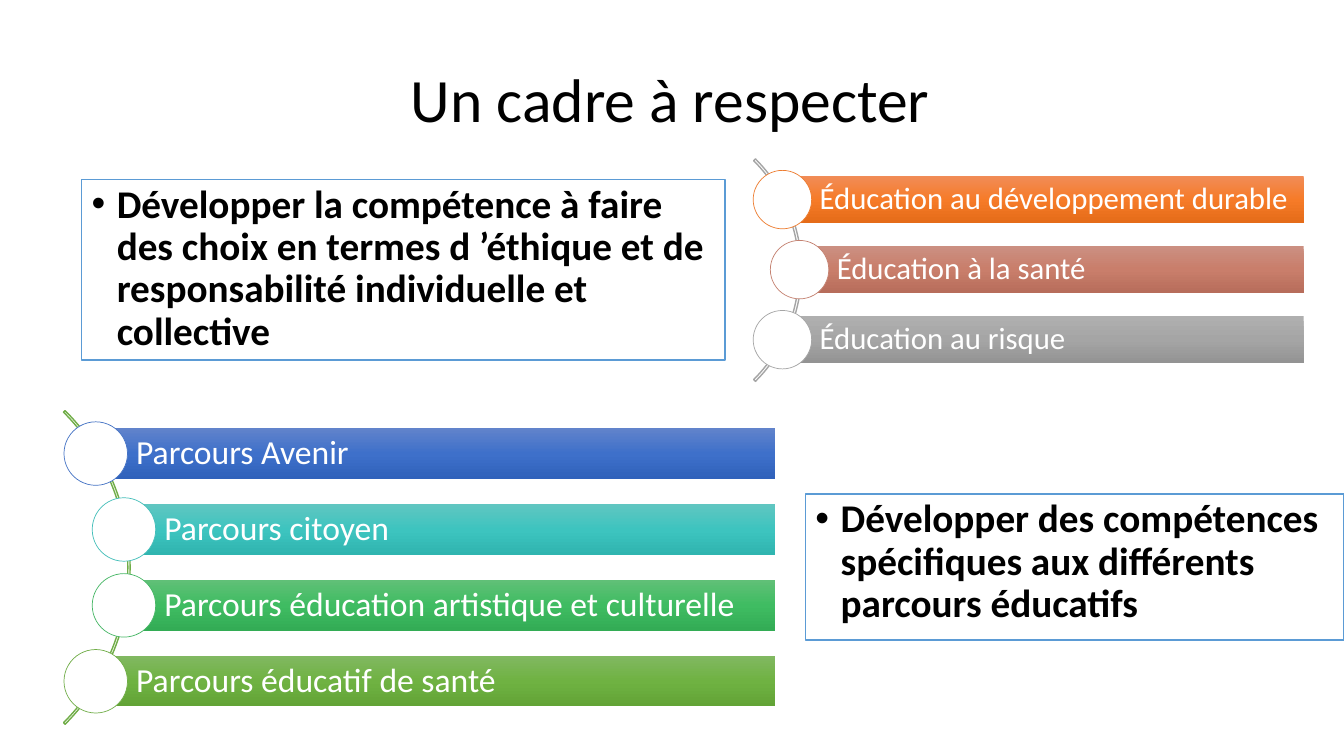
"""Build the slide "Un cadre à respecter" with its two lists and two goals."""
import copy

import lxml.etree
import pptx
import pptx.dml.color
import pptx.enum.shapes
import pptx.enum.text
import pptx.oxml.ns
import pptx.util

Inches = pptx.util.Inches
Pt = pptx.util.Pt
qn = pptx.oxml.ns.qn
SHAPES = pptx.enum.shapes.MSO_SHAPE
ANCHOR = pptx.enum.text.MSO_ANCHOR
ALIGN = pptx.enum.text.PP_ALIGN


def color(value):
    """Return the colour of a hex string."""
    return pptx.dml.color.RGBColor.from_string(value)


def add_shape(kind, box, line=None, line_width=1, text="", size=24, text_color="FFFFFF"):
    """Add a white shape with an optional outline and left-aligned text."""
    shape = slide.shapes.add_shape(kind, *[Inches(length) for length in box])
    shape.shadow.inherit = False
    shape.fill.solid()
    shape.fill.fore_color.rgb = color("FFFFFF")
    if line:
        shape.line.color.rgb = color(line)
        shape.line.width = Pt(line_width)
    else:
        shape.line.fill.background()
    if text:
        shape.text_frame.text = text
        shape.text_frame.word_wrap = True
        paragraph = shape.text_frame.paragraphs[0]
        paragraph.alignment = ALIGN.LEFT
        paragraph.line_spacing = 0.9
        font = paragraph.runs[0].font
        font.name = "Calibri"
        font.size = Pt(size)
        font.color.rgb = color(text_color)
    return shape


presentation = pptx.Presentation()
presentation.slide_width = Inches(13.33)
presentation.slide_height = Inches(7.5)
slide = presentation.slides.add_slide(presentation.slide_layouts[5])

title = slide.shapes.title
title.left, title.top = Inches(0.9), Inches(0.29)
title.width, title.height = Inches(11.5), Inches(1.45)
title.text_frame.text = "Un cadre à respecter"
title.text_frame.vertical_anchor = ANCHOR.MIDDLE
title_paragraph = title.text_frame.paragraphs[0]
title_paragraph.alignment = ALIGN.CENTER
title_paragraph.line_spacing = 0.9
title_font = title_paragraph.runs[0].font
title_font.name = "Calibri"
title_font.size = Pt(44)
title_font.color.rgb = color("000000")

goals = [
    ((0.81, 1.78, 6.38, 1.79),
     "Développer la compétence à faire des choix en termes d ’éthique "
     "et de responsabilité individuelle et collective"),
    ((7.99, 4.9, 5.34, 1.45),
     "Développer des compétences spécifiques aux différents parcours éducatifs"),
]
for box, text in goals:
    goal = add_shape(SHAPES.RECTANGLE, box, "5B9BD5", 1, text, 28, "000000")
    goal.text_frame.vertical_anchor = ANCHOR.TOP
    paragraph = goal.text_frame.paragraphs[0]
    paragraph.space_before = Pt(10)
    paragraph.runs[0].font.bold = True
    properties = paragraph._p.get_or_add_pPr()
    properties.set("marL", str(Inches(0.25)))
    properties.set("indent", str(-Inches(0.25)))
    bullet_font = lxml.etree.SubElement(properties, qn("a:buFont"))
    bullet_font.set("typeface", "Arial")
    lxml.etree.SubElement(properties, qn("a:buChar")).set("char", "•")

lists = [
    {
        "arc": (4.83, 1.12, 3.12, 3.12), "thickness": 0.008, "arc_color": "A5A5A5",
        "top": 1.75, "pitch": 0.695, "height": 0.46, "right": 12.93,
        "circle": 0.58, "inset": 0.37, "margin": 0.06, "size": 22,
        "items": [
            (7.76, "Éducation au développement durable", "ED7D31", ("F18C57", "F67B28", "E56C19")),
            (7.93, "Éducation à la santé", "C48170", ("CB8F81", "C97E6B", "B76D5B")),
            (7.76, "Éducation au risque", "A5A5A5", ("AFAFAF", "A5A5A5", "939393")),
        ],
    },
    {
        "arc": (-3.11, 3.43, 4.4, 4.4), "thickness": 0.005, "arc_color": "70AD47",
        "top": 4.25, "pitch": 0.753, "height": 0.5, "right": 7.69,
        "circle": 0.63, "inset": 0.4, "margin": 0.07, "size": 24,
        "items": [
            (0.95, "Parcours Avenir", "4472C4", ("6183CB", "3E70CA", "3062BB")),
            (1.23, "Parcours citoyen", "43BEB9", ("60C6C1", "3DC4BF", "30B5B0")),
            (1.23, "Parcours éducation artistique et culturelle", "45B664",
             ("60C077", "3FBC62", "33AC55")),
            (0.95, "Parcours éducatif de santé", "70AD47", ("81B861", "6FB242", "62A336")),
        ],
    },
]
for group in lists:
    arc = add_shape(SHAPES.BLOCK_ARC, group["arc"], group["arc_color"])
    arc.fill.background()
    for index, value in enumerate((189, 27, group["thickness"])):
        arc.adjustments[index] = value

    for row, (left, text, outline, gradient) in enumerate(group["items"]):
        top = group["top"] + row * group["pitch"]
        height, circle = group["height"], group["circle"]
        bar = add_shape(SHAPES.RECTANGLE, (left, top, group["right"] - left, height),
                        text=text, size=group["size"])
        frame = bar.text_frame
        frame.vertical_anchor = ANCHOR.MIDDLE
        frame.margin_left = Inches(group["inset"])
        frame.margin_top = frame.margin_right = frame.margin_bottom = Inches(group["margin"])

        bar.fill.gradient()
        bar.fill.gradient_angle = 270
        stop_list = bar._element.spPr.find(".//" + qn("a:gsLst"))
        stop_list.insert(1, copy.deepcopy(stop_list[0]))
        for stop, position, shade in zip(bar.fill.gradient_stops, (0, 0.5, 1), gradient):
            stop.position = position
            stop.color.rgb = color(shade)

        add_shape(SHAPES.OVAL, (left - circle / 2, top + (height - circle) / 2, circle, circle),
                  outline, 0.5)

presentation.save("out.pptx")
